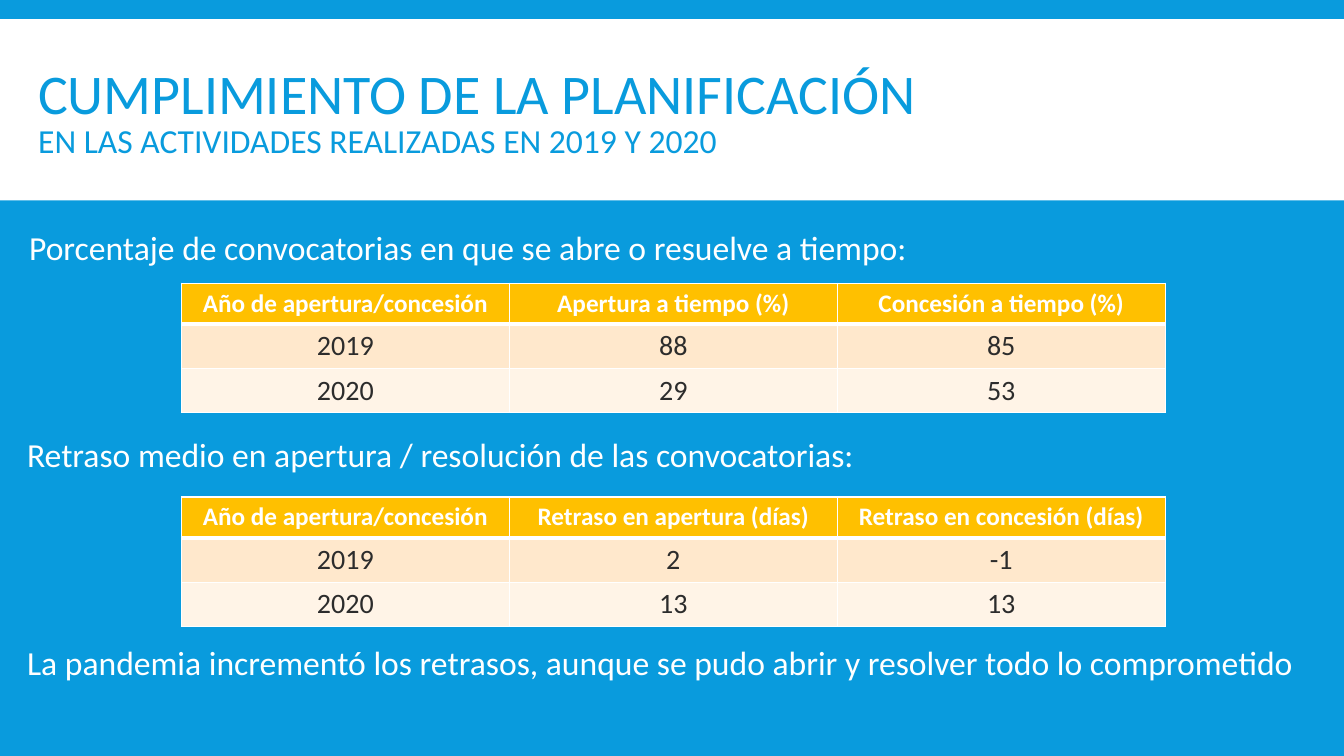
import pptx
import pptx.util
import pptx.dml.color
import pptx.enum.shapes
import pptx.enum.text
import pptx.oxml
import pptx.oxml.ns

BLUE = pptx.dml.color.RGBColor(0x09, 0x9B, 0xDD)
WHITE = pptx.dml.color.RGBColor(0xFF, 0xFF, 0xFF)
AMBER = pptx.dml.color.RGBColor(0xFF, 0xC0, 0x00)
PEACH = pptx.dml.color.RGBColor(0xFF, 0xE8, 0xCC)
CREAM = pptx.dml.color.RGBColor(0xFF, 0xF4, 0xE7)
INK = pptx.dml.color.RGBColor(0x2C, 0x2C, 0x2C)

YEAR_HEADING = "Año de apertura/concesión"
TABLE_LEFT, TABLE_WIDTH = 13.5, 73.2
HEADING_HEIGHT, YEAR_HEIGHT = 5.4, 5.87
NOTE_HEIGHT = 6.67


def write(paragraph, text, size=24, color=WHITE, bold=False, font="Calibri"):
    run = paragraph.add_run()
    run.text = text
    run.font.name = font
    run.font.size = pptx.util.Pt(size)
    run.font.bold = bold
    run.font.color.rgb = color


class PlanningSlide:
    """Draws styled elements on one slide, placed in percent of its width and height."""

    def __init__(self, deck):
        self.width, self.height = deck.slide_width, deck.slide_height
        self.slide = deck.slides.add_slide(deck.slide_layouts[6])
        backdrop = self.slide.background.fill
        backdrop.solid()
        backdrop.fore_color.rgb = BLUE

    def across(self, share):
        return round(self.width * share / 100)

    def down(self, share):
        return round(self.height * share / 100)

    def area(self, left, top, width, height):
        return self.across(left), self.down(top), self.across(width), self.down(height)

    def band(self, top, height):
        header_band = self.slide.shapes.add_shape(
            pptx.enum.shapes.MSO_SHAPE.RECTANGLE, *self.area(0, top, 100, height))
        header_band.shadow.inherit = False
        header_band.fill.solid()
        header_band.fill.fore_color.rgb = WHITE
        header_band.line.fill.background()

    def title(self, headline, subtitle, *place):
        frame = self.slide.shapes.add_textbox(*self.area(*place)).text_frame
        frame.word_wrap = True
        frame.vertical_anchor = pptx.enum.text.MSO_ANCHOR.MIDDLE
        heading = frame.paragraphs[0]
        heading.line_spacing = 0.85
        write(heading, headline, size=40, color=BLUE)
        heading.add_line_break()
        write(heading, subtitle, color=BLUE)

    def note(self, text, left, top, width):
        frame = self.slide.shapes.add_textbox(
            *self.area(left, top, width, NOTE_HEIGHT)).text_frame
        frame.word_wrap = False
        frame.auto_size = pptx.enum.text.MSO_AUTO_SIZE.SHAPE_TO_FIT_TEXT
        write(frame.paragraphs[0], text)

    def border(self, cell, **points):
        properties = cell._tc.get_or_add_tcPr()
        for side in ("L", "R", "T", "B"):
            width = pptx.util.Pt(points.get(side, 1))
            properties.append(pptx.oxml.parse_xml(
                f'<a:ln{side} {pptx.oxml.ns.nsdecls("a")} w="{width}">'
                f'<a:solidFill><a:srgbClr val="{WHITE}"/></a:solidFill></a:ln{side}>'))

    def table(self, top, records):
        height = HEADING_HEIGHT + YEAR_HEIGHT * (len(records) - 1)
        grid = self.slide.shapes.add_table(
            len(records), len(records[0]),
            *self.area(TABLE_LEFT, top, TABLE_WIDTH, height)).table
        for index, record in enumerate(records):
            is_heading = index == 0
            grid.rows[index].height = self.down(HEADING_HEIGHT if is_heading else YEAR_HEIGHT)
            fill = AMBER if is_heading else (PEACH if index % 2 else CREAM)
            for cell, value in zip(grid.rows[index].cells, record):
                self.border(cell, T=3 if index == 1 else 1, B=3 if is_heading else 1)
                cell.fill.solid()
                cell.fill.fore_color.rgb = fill
                paragraph = cell.text_frame.paragraphs[0]
                paragraph.alignment = pptx.enum.text.PP_ALIGN.CENTER
                write(paragraph, value, size=18 if is_heading else 20,
                      color=WHITE if is_heading else INK, bold=is_heading)


def main():
    deck = pptx.Presentation()
    deck.slide_width = pptx.util.Inches(13.33)
    deck.slide_height = pptx.util.Inches(7.5)
    planning = PlanningSlide(deck)
    planning.band(2.53, 24)
    planning.title("CUMPLIMIENTO DE LA PLANIFICACIÓN",
                   "EN LAS ACTIVIDADES REALIZADAS EN 2019 Y 2020",
                   2.1, 4.13, 85.82, 22)
    planning.note("Porcentaje de convocatorias en que se abre o resuelve a tiempo:",
                  1.43, 29.33, 67.8)
    planning.table(37.47, [
        (YEAR_HEADING, "Apertura a tiempo (%)", "Concesión a tiempo (%)"),
        ("2019", "88", "85"),
        ("2020", "29", "53"),
    ])
    planning.note("Retraso medio en apertura / resolución de las convocatorias:",
                  1.28, 56.67, 63.8)
    planning.table(65.73, [
        (YEAR_HEADING, "Retraso en apertura (días)", "Retraso en concesión (días)"),
        ("2019", "2", "-1"),
        ("2020", "13", "13"),
    ])
    planning.note("La pandemia incrementó los retrasos, aunque se pudo abrir y resolver "
                  "todo lo comprometido", 1.28, 84.27, 97.4)
    deck.save("out.pptx")


if __name__ == "__main__":
    main()
